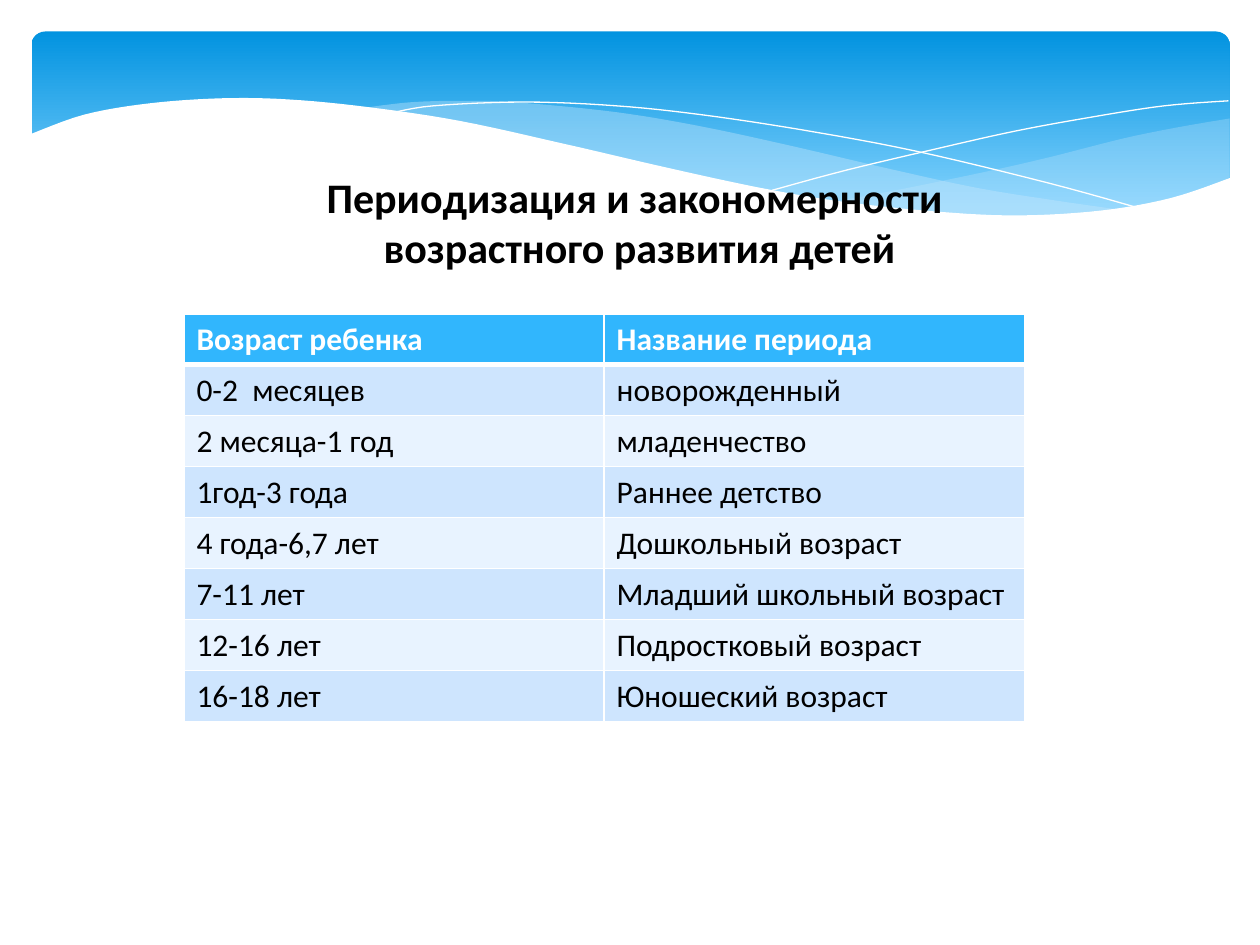
"""Build a slide with a wave banner and a table of child development periods."""
from lxml import etree
from pptx import Presentation
from pptx.dml.color import RGBColor
from pptx.enum import shapes, text
from pptx.oxml.ns import qn
from pptx.util import Inches, Pt

WHITE = RGBColor(0xFF, 0xFF, 0xFF)
BLACK = RGBColor(0, 0, 0)
BANNER_TOP = RGBColor(0x02, 0x93, 0xE0)
BANNER_BOTTOM = RGBColor(0x83, 0xD3, 0xFE)
WAVE = RGBColor(0xC6, 0xE7, 0xFC)
HEADER = RGBColor(0x31, 0xB6, 0xFD)
BANDS = (RGBColor(0xE8, 0xF3, 0xFF), RGBColor(0xCE, 0xE5, 0xFE))

RIGHT_WAVE = (
    [(9.76, 0.94), (9.35, 1.01), (8.91, 1.1), (8.32, 1.25), (7.79, 1.37), (7.06, 1.52), (6.61, 1.6)],
    [(6.61, 1.6), (7.05, 1.65), (7.57, 1.7), (8.03, 1.72), (8.44, 1.71), (8.89, 1.66), (9.35, 1.56), (9.76, 1.41)],
)
MIDDLE_WAVE = (
    [(8.93, 1.67), (8.37, 1.59), (7.75, 1.49), (7.06, 1.34), (6.29, 1.16), (5.55, 1), (4.89, 0.89),
     (4.2, 0.82), (3.8, 0.8), (3.28, 0.81), (2.86, 0.86)],
    [(2.86, 0.86), (3.42, 0.94), (4.04, 1.06), (4.49, 1.16), (5.3, 1.35), (6.01, 1.5), (6.65, 1.61),
     (7.22, 1.68), (7.73, 1.72), (8.18, 1.73), (8.57, 1.71), (8.93, 1.67)],
)
FALLING_LINE = (
    [(3.09, 0.9), (3.44, 0.84), (4.16, 0.81), (4.89, 0.84), (5.56, 0.91), (6.36, 1.03),
     (7.27, 1.2), (8.31, 1.45), (9.07, 1.66)],
)
RISING_LINE = (
    [(6.13, 1.51), (6.72, 1.35), (7.48, 1.17), (8.06, 1.04), (8.66, 0.93), (9.24, 0.84), (9.75, 0.8)],
)
WHITE_WAVE = (
    [(9.77, 1.41), (9.3, 1.57), (8.75, 1.67), (8.09, 1.71), (7.44, 1.68), (6.68, 1.6), (6.03, 1.49),
     (5.29, 1.33), (4.47, 1.14), (3.65, 0.96), (2.92, 0.85), (2.3, 0.79), (1.77, 0.78), (1.19, 0.82),
     (0.67, 0.91), (0.23, 1.07)],
    [(0.23, 2.24), (9.77, 2.24)],
)

TITLE = "Периодизация и закономерности \nвозрастного развития детей"
PERIODS = (
    ("Возраст ребенка", "Название периода"),
    ("0-2  месяцев", "новорожденный"),
    ("2 месяца-1 год", "младенчество"),
    ("1год-3 года", "Раннее детство"),
    ("4 года-6,7 лет", "Дошкольный возраст"),
    ("7-11 лет", "Младший школьный возраст"),
    ("12-16 лет", "Подростковый возраст"),
    ("16-18 лет", "Юношеский возраст"),
)


def smooth(knots, steps=6):
    """Return points on a Catmull-Rom curve through the knots."""
    padded = [knots[0], *knots, knots[-1]]
    points = [knots[0]]
    for a, b, c, d in zip(padded, padded[1:], padded[2:], padded[3:]):
        for step in range(1, steps + 1):
            t = step / steps
            points.append(tuple(
                q + t / 2 * (r - p + t * (2 * p - 5 * q + 4 * r - s + t * (3 * (q - r) + s - p)))
                for p, q, r, s in zip(a, b, c, d)
            ))
    return points


class SlideBuilder:
    """Hold the text style and the current slide."""

    font = "Calibri"

    def __init__(self, page):
        """Keep the slide to draw on."""
        self.page = page

    def style(self, frame, size, color, bold):
        """Format every run of a text frame."""
        for para in frame.paragraphs:
            for span in para.runs:
                span.font.name = self.font
                span.font.size = Pt(size)
                span.font.bold = bold
                span.font.color.rgb = color

    def banner(self, left, top, width, height):
        """Draw the rounded gradient banner."""
        box = self.page.shapes.add_shape(
            shapes.MSO_SHAPE.ROUNDED_RECTANGLE, *map(Inches, (left, top, width, height)))
        box.adjustments[0] = 0.07
        box.shadow.inherit = False
        box.line.fill.background()
        box.fill.gradient()
        box.fill.gradient_angle = 270
        for stop, color, position in zip(
                box.fill.gradient_stops, (BANNER_TOP, BANNER_BOTTOM), (0, 0.9)):
            stop.color.rgb = color
            stop.position = position

    def curve(self, edges, closed):
        """Draw a smooth outline along the edges."""
        points = [tuple(map(Inches, point)) for edge in edges for point in smooth(edge)]
        builder = self.page.shapes.build_freeform(*points[0])
        builder.add_line_segments(points[1:], close=closed)
        outline = builder.convert_to_shape()
        outline.shadow.inherit = False
        return outline

    def wave(self, edges, color, opacity=100):
        """Draw a filled wave."""
        outline = self.curve(edges, True)
        outline.line.fill.background()
        outline.fill.solid()
        outline.fill.fore_color.rgb = color
        if opacity < 100:
            tint = outline.element.spPr.find(qn("a:solidFill")).find(qn("a:srgbClr"))
            etree.SubElement(tint, qn("a:alpha"), val=str(opacity * 1000))

    def hairline(self, edges):
        """Draw a thin white curve."""
        outline = self.curve(edges, False)
        outline.fill.background()
        outline.line.color.rgb = WHITE
        outline.line.width = Pt(0)

    def title(self, wording, left, top, width, height):
        """Fill the title placeholder and bring it to the front."""
        box = self.page.shapes.title
        box.left, box.top, box.width, box.height = map(Inches, (left, top, width, height))
        frame = box.text_frame
        frame.text = wording
        frame.word_wrap = True
        frame.auto_size = text.MSO_AUTO_SIZE.SHAPE_TO_FIT_TEXT
        frame.vertical_anchor = text.MSO_ANCHOR.TOP
        for para in frame.paragraphs:
            para.alignment = text.PP_ALIGN.CENTER
        self.style(frame, 24, BLACK, True)
        box.element.getparent().append(box.element)

    def borders(self, cell, top, bottom):
        """Give a cell white borders."""
        properties = cell._tc.get_or_add_tcPr()
        for side, width in zip("LRTB", (1, 1, top, bottom)):
            line = etree.SubElement(properties, qn(f"a:ln{side}"), w=str(Pt(width)))
            fill = etree.SubElement(line, qn("a:solidFill"))
            etree.SubElement(fill, qn("a:srgbClr"), val=str(WHITE))

    def table(self, rows, left, top, width, height):
        """Draw a banded table with a header row."""
        grid = self.page.shapes.add_table(
            len(rows), len(rows[0]), *map(Inches, (left, top, width, height))).table
        for i, row in enumerate(rows):
            for j, wording in enumerate(row):
                cell = grid.cell(i, j)
                cell.text = wording
                self.style(cell.text_frame, 18, BLACK if i else WHITE, i == 0)
                self.borders(cell, 3 if i == 1 else 1, 3 if i == 0 else 1)
                cell.fill.solid()
                cell.fill.fore_color.rgb = BANDS[i % 2] if i else HEADER


def main():
    """Build and save the deck."""
    deck = Presentation()
    deck.slide_width, deck.slide_height = Inches(10), Inches(7.5)
    slide = SlideBuilder(deck.slides.add_slide(deck.slide_layouts.get_by_name("Title Only")))
    slide.banner(0.25, 0.25, 9.51, 1.56)
    slide.wave(RIGHT_WAVE, WAVE, 29)
    slide.wave(MIDDLE_WAVE, WAVE, 40)
    slide.hairline(FALLING_LINE)
    slide.hairline(RISING_LINE)
    slide.wave(WHITE_WAVE, WHITE)
    slide.title(TITLE, 0.43, 1.31, 9.29, 0.91)
    slide.table(PERIODS, 1.46, 2.49, 6.67, 3.24)
    deck.save("out.pptx")


if __name__ == "__main__":
    main()
